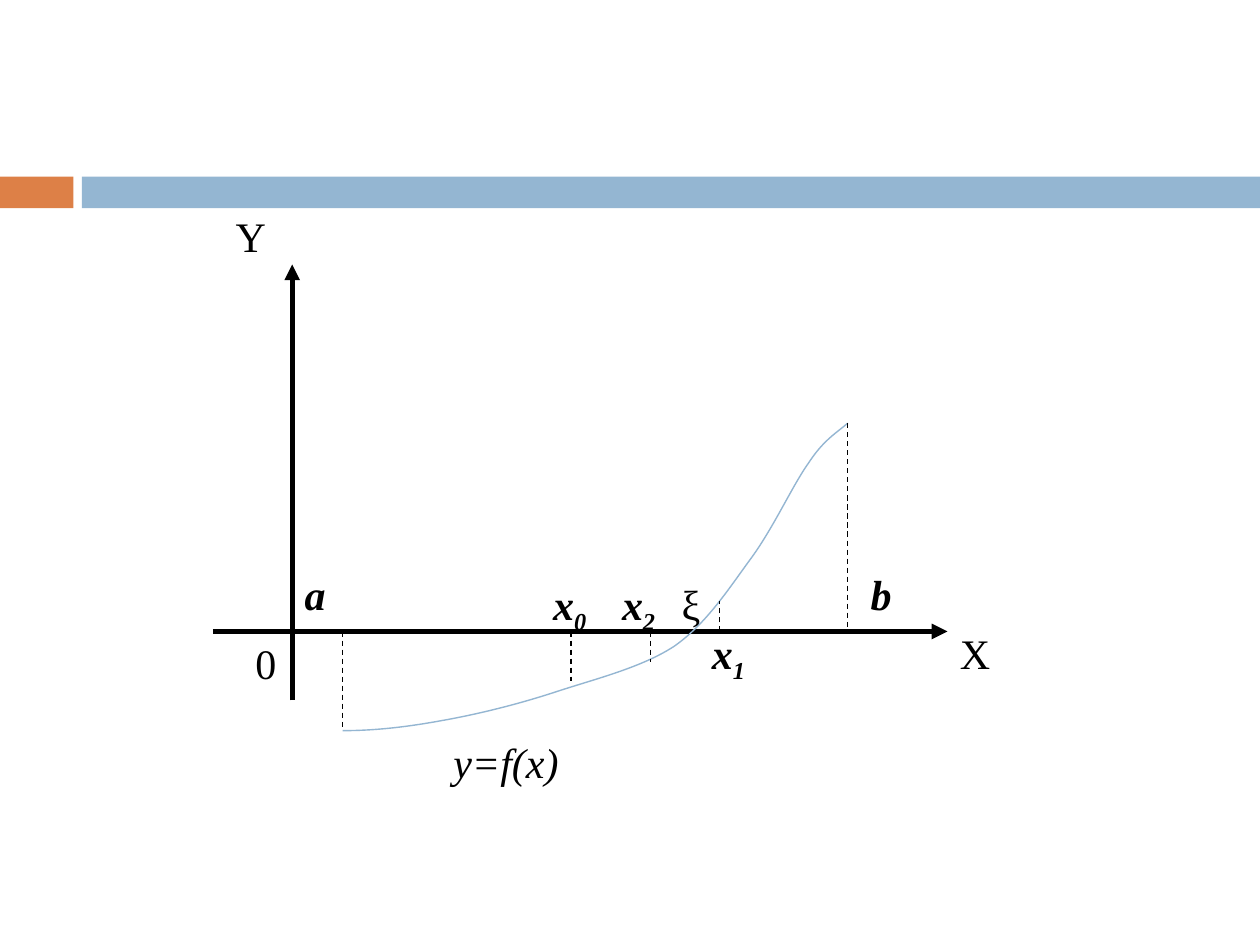
from dataclasses import dataclass

from lxml.etree import SubElement
from pptx import Presentation
from pptx.dml.color import RGBColor
from pptx.enum.dml import MSO_LINE
from pptx.enum.shapes import MSO_CONNECTOR, MSO_SHAPE
from pptx.enum.text import MSO_AUTO_SIZE
from pptx.oxml.ns import qn
from pptx.util import Cm, Pt


@dataclass(frozen=True)
class Theme:
    accent: RGBColor = RGBColor(0xDD, 0x80, 0x47)
    band: RGBColor = RGBColor(0x94, 0xB6, 0xD2)
    ink: RGBColor = RGBColor(0, 0, 0)
    font: str = "Times New Roman"
    label_size: float = 24
    axis_width: float = 3
    guide_width: float = 0.75
    curve_width: float = 0.79


class GraphSlide:
    """Holds the theme and the slide; all lengths are in centimetres."""

    def __init__(self, slide, theme):
        self.shapes = slide.shapes
        self.theme = theme

    def bar(self, left, top, width, height, color):
        shape = self.shapes.add_shape(
            MSO_SHAPE.RECTANGLE, Cm(left), Cm(top), Cm(width), Cm(height))
        shape.shadow.inherit = False
        shape.fill.solid()
        shape.fill.fore_color.rgb = color
        shape.line.fill.background()

    def line(self, start, end, width):
        connector = self.shapes.add_connector(
            MSO_CONNECTOR.STRAIGHT, *map(Cm, start + end))
        connector.line.color.rgb = self.theme.ink
        connector.line.width = Pt(width)
        SubElement(connector._element.spPr, qn("a:effectLst"))
        return connector

    def axis(self, start, end):
        connector = self.line(start, end, self.theme.axis_width)
        SubElement(connector.line._get_or_add_ln(), qn("a:tailEnd"), type="triangle")

    def guide(self, x, start_y, end_y):
        connector = self.line((x, start_y), (x, end_y), self.theme.guide_width)
        connector.line.dash_style = MSO_LINE.DASH

    def curve(self, start, segments):
        """Draw cubic segments, each given as two control points and an end."""
        builder = self.shapes.build_freeform(*map(Cm, start))
        points = [(Cm(x), Cm(y)) for segment in segments for x, y in segment]
        builder.add_line_segments(points, close=False)
        shape = builder.convert_to_shape()
        shape.shadow.inherit = False
        shape.fill.background()
        shape.line.color.rgb = self.theme.band
        shape.line.width = Pt(self.theme.curve_width)
        # Merge every three straight steps into one cubic segment
        steps = list(shape._element.iter(qn("a:lnTo")))
        outline = steps[0].getparent()
        for index in range(0, len(steps), 3):
            cubic = SubElement(outline, qn("a:cubicBezTo"))
            for step in steps[index:index + 3]:
                cubic.append(step[0])
                outline.remove(step)

    def label(self, text, left, top, width, subscript="",
              bold=False, italic=False, wrap=False):
        box = self.shapes.add_textbox(Cm(left), Cm(top), Cm(width), Cm(1.27))
        frame = box.text_frame
        frame.text = text
        frame.word_wrap = wrap
        frame.auto_size = MSO_AUTO_SIZE.SHAPE_TO_FIT_TEXT
        paragraph = frame.paragraphs[0]
        if subscript:
            run = paragraph.add_run()
            run.text = subscript
            run._r.get_or_add_rPr().set("baseline", "-25000")
        for run in paragraph.runs:
            run.font.name = self.theme.font
            run.font.size = Pt(self.theme.label_size)
            run.font.color.rgb = self.theme.ink
            run.font.bold = bold
            run.font.italic = italic


def main():
    presentation = Presentation()
    presentation.slide_width, presentation.slide_height = Cm(25.4), Cm(19.05)
    theme = Theme()
    slide = presentation.slides.add_slide(presentation.slide_layouts[6])
    graph = GraphSlide(slide, theme)

    # Header band
    graph.bar(0, 3.56, 1.48, 0.64, theme.accent)
    graph.bar(1.65, 3.56, 23.75, 0.64, theme.band)

    # Axes and their labels
    axis_x, axis_y = 5.89, 12.73
    graph.axis((axis_x, 14.12), (axis_x, 5.33))
    graph.axis((4.29, axis_y), (19.1, axis_y))
    graph.label("0", 4.9, axis_y, 0.94)
    graph.label("X", 19.1, 12.52, 1.12)
    graph.label("Y", 4.5, 4.11, 1.12)

    # Function curve
    curve_start, curve_end = (6.91, 14.73), (17.09, 8.53)
    graph.curve(curve_start, [
        ((7.54, 14.73), (8.18, 14.66), (8.89, 14.53)),
        ((9.63, 14.4), (10.44, 14.2), (11.23, 13.94)),
        ((11.99, 13.69), (12.93, 13.46), (13.59, 13.03)),
        ((14.25, 12.57), (14.71, 11.84), (15.16, 11.23)),
        ((15.62, 10.59), (15.98, 9.78), (16.31, 9.32)),
        ((16.61, 8.86), (16.89, 8.71), curve_end),
    ])
    graph.label("y=f(x)", 8.89, 14.73, 2.64, italic=True, wrap=True)

    # Guides between the axis and the curve
    graph.guide(curve_end[0], curve_end[1], axis_y)
    for x, y in (curve_start, (11.51, 13.72), (14.5, 12.12), (13.11, 13.34)):
        graph.guide(x, axis_y, y)

    # Interval ends and root
    for name, left in (("a", axis_x), ("b", 17.3)):
        graph.label(name, left, 11.33, 0.94, bold=True, italic=True)
    graph.label("ξ", 13.49, 11.53, 0.94)

    # Successive approximations
    for index, left, top, wrap in (("0", 10.9, 11.53, False),
                                   ("1", 14.1, 12.52, True),
                                   ("2", 12.29, 11.53, True)):
        graph.label("x", left, top, 1.22, subscript=index,
                    bold=True, italic=True, wrap=wrap)

    presentation.save("out.pptx")


if __name__ == "__main__":
    main()
